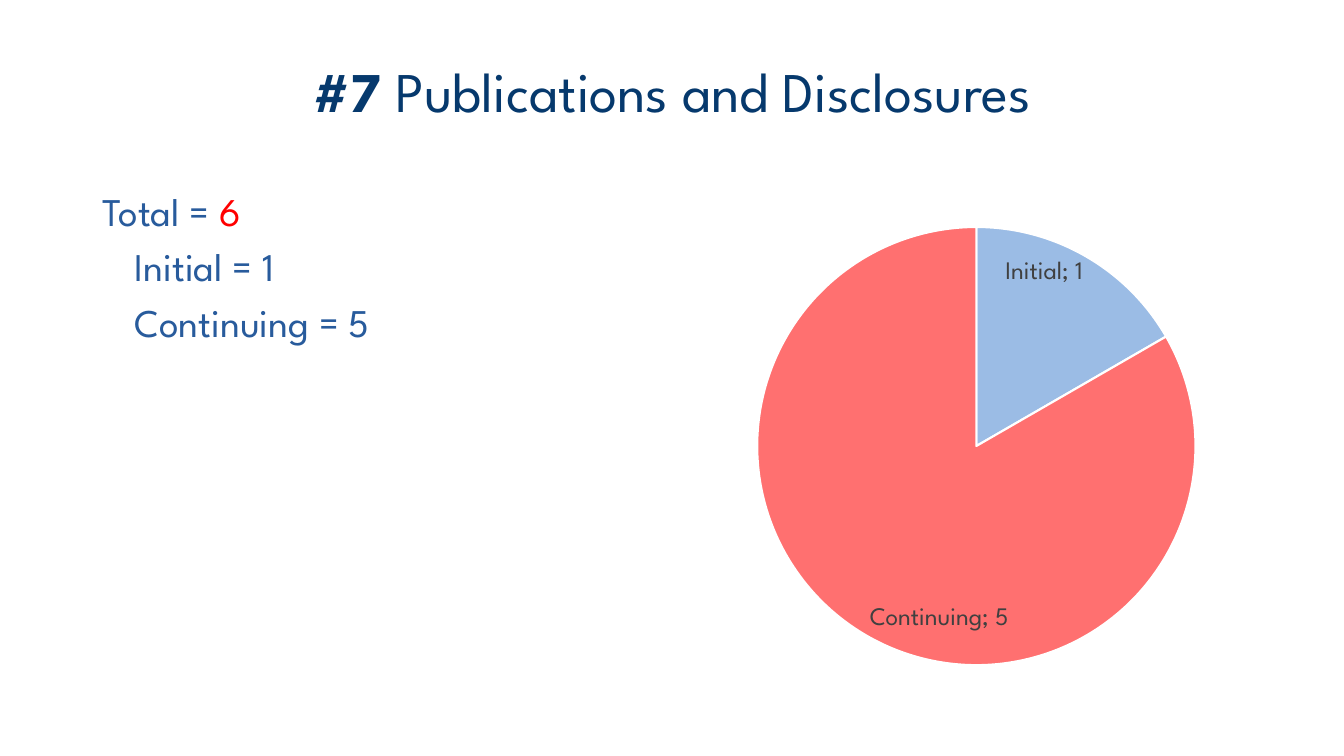
from dataclasses import dataclass

import pptx
import pptx.chart.data
import pptx.dml.color
import pptx.enum.chart
import pptx.enum.text
import pptx.oxml
import pptx.oxml.ns
import pptx.util

RGBColor = pptx.dml.color.RGBColor
NAVY = RGBColor(0x06, 0x39, 0x6D)
BLUE = RGBColor(0x28, 0x5B, 0x9C)
RED = RGBColor(0xFF, 0x00, 0x00)
GREY = RGBColor(0x40, 0x40, 0x40)
WHITE = RGBColor(0xFF, 0xFF, 0xFF)
PALE_BLUE = RGBColor(0x9B, 0xBC, 0xE5)
CORAL = RGBColor(0xFF, 0x70, 0x70)

FONT = "League Spartan"
SLIDE_WIDTH = pptx.util.Inches(13.33)
SLIDE_HEIGHT = pptx.util.Inches(7.5)


@dataclass(frozen=True)
class Area:
    """A rectangle in shares of the slide's width and height."""
    left: float
    top: float
    width: float
    height: float

    def box(self) -> tuple[int, int, int, int]:
        return (int(self.left * SLIDE_WIDTH), int(self.top * SLIDE_HEIGHT),
                int(self.width * SLIDE_WIDTH), int(self.height * SLIDE_HEIGHT))


@dataclass(frozen=True)
class Piece:
    text: str
    color: RGBColor
    bold: bool = False


@dataclass(frozen=True)
class Line:
    pieces: tuple[Piece, ...]
    size: int
    indent: float = 0
    space_before: int = 0
    align: pptx.enum.text.PP_ALIGN = pptx.enum.text.PP_ALIGN.LEFT


@dataclass(frozen=True)
class Category:
    label: str
    count: int
    color: RGBColor


TITLE_AREA = Area(0.05, 0.068, 0.9, 0.125)
COUNTS_AREA = Area(0.05, 0.241, 0.444, 0.647)
PIE_AREA = Area(0.474, 0.259, 0.526, 0.643)
PLOT_SHARES = {"x": 0.17, "y": 0.06, "w": 0.62, "h": 0.91}

CATEGORIES = (Category("Initial", 1, PALE_BLUE), Category("Continuing", 5, CORAL))
TOTAL = sum(category.count for category in CATEGORIES)

TITLE = (Line((Piece("#7 ", NAVY, True), Piece("Publications and Disclosures", NAVY)), 40,
              align=pptx.enum.text.PP_ALIGN.CENTER),)
COUNTS = (
    Line((Piece("Total = ", BLUE), Piece(str(TOTAL), RED)), 28, 0.25),
    *(Line((Piece(f"{category.label} = {category.count}", BLUE),), 28, 0.57, 6)
      for category in CATEGORIES),
)


def add_lines(slide: pptx.slide.Slide, area: Area, lines: tuple[Line, ...]) -> None:
    frame = slide.shapes.add_textbox(*area.box()).text_frame
    frame.word_wrap = True
    for index, line in enumerate(lines):
        paragraph = frame.add_paragraph() if index else frame.paragraphs[0]
        paragraph.alignment = line.align
        paragraph.space_before = pptx.util.Pt(line.space_before)
        paragraph._p.get_or_add_pPr().set("marL", str(pptx.util.Inches(line.indent)))
        paragraph.font.name = FONT
        paragraph.font.size = pptx.util.Pt(line.size)
        for piece in line.pieces:
            run = paragraph.add_run()
            run.text = piece.text
            run.font.bold = piece.bold
            run.font.color.rgb = piece.color


def place_plot(chart: pptx.chart.chart.Chart) -> None:
    """Fix the pie's place inside the chart area."""
    plot_area = chart._chartSpace.chart.plotArea
    for layout in plot_area.findall(pptx.oxml.ns.qn("c:layout")):
        plot_area.remove(layout)
    shares = "".join(f'<c:{key} val="{share}"/>' for key, share in PLOT_SHARES.items())
    plot_area.insert(0, pptx.oxml.parse_xml(
        f'<c:layout {pptx.oxml.ns.nsdecls("c")}><c:manualLayout>'
        '<c:layoutTarget val="inner"/><c:xMode val="edge"/><c:yMode val="edge"/>'
        f'{shares}</c:manualLayout></c:layout>'))


def add_pie(slide: pptx.slide.Slide, area: Area, categories: tuple[Category, ...]) -> None:
    data = pptx.chart.data.CategoryChartData()
    data.categories = [category.label for category in categories]
    data.add_series("Series 1", [category.count for category in categories])
    chart = slide.shapes.add_chart(
        pptx.enum.chart.XL_CHART_TYPE.PIE, *area.box(), data).chart
    chart.has_title = False
    chart.has_legend = False
    chart.font.name = FONT
    chart.font.size = pptx.util.Pt(18)
    chart.font.color.rgb = GREY
    place_plot(chart)

    plot = chart.plots[0]
    plot.vary_by_categories = True
    for index, category in enumerate(categories):
        wedge = plot.series[0].points[index].format
        wedge.fill.solid()
        wedge.fill.fore_color.rgb = category.color
        wedge.line.color.rgb = WHITE
        wedge.line.width = pptx.util.Pt(1.5)

    labels = plot.series[0].data_labels
    labels.show_category_name = True
    labels.show_value = True
    labels.show_percentage = False
    labels.position = pptx.enum.chart.XL_LABEL_POSITION.INSIDE_END
    labels.font.name = FONT
    labels.font.size = pptx.util.Pt(18)
    labels.font.color.rgb = GREY


def main() -> None:
    presentation = pptx.Presentation()
    presentation.slide_width = SLIDE_WIDTH
    presentation.slide_height = SLIDE_HEIGHT
    slide = presentation.slides.add_slide(presentation.slide_layouts[6])
    add_lines(slide, TITLE_AREA, TITLE)
    add_lines(slide, COUNTS_AREA, COUNTS)
    add_pie(slide, PIE_AREA, CATEGORIES)
    presentation.save("out.pptx")


if __name__ == "__main__":
    main()
